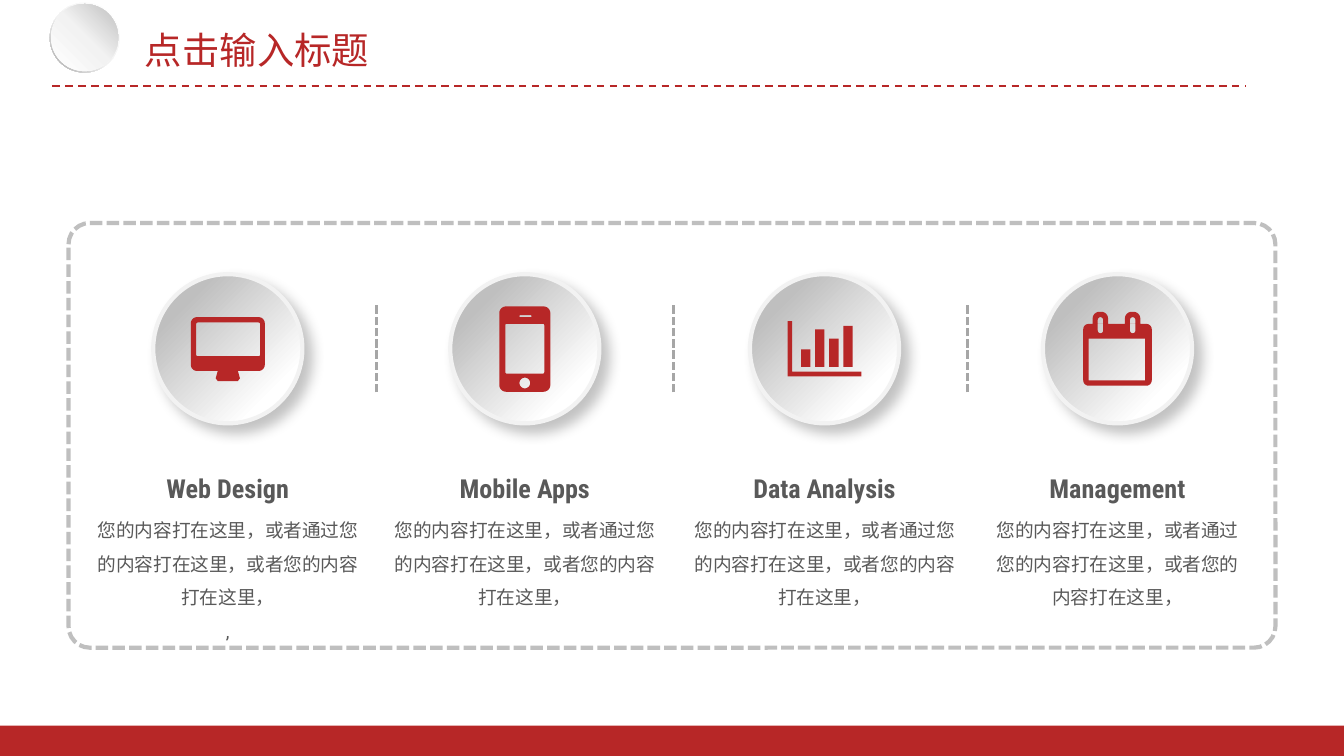
from math import cos, pi, sin

from lxml.etree import SubElement
from pptx import Presentation
from pptx.dml.color import RGBColor
from pptx.enum.dml import MSO_LINE_DASH_STYLE as Dash
from pptx.enum.shapes import MSO_CONNECTOR, MSO_SHAPE as Shape
from pptx.enum.text import MSO_ANCHOR, PP_ALIGN
from pptx.oxml.ns import qn
from pptx.util import Inches, Pt

RED = RGBColor(0xB7, 0x27, 0x27)
TEXT_GRAY = RGBColor(0x59, 0x59, 0x59)
DIVIDER_GRAY = RGBColor(0xA6, 0xA6, 0xA6)
FRAME_GRAY = RGBColor(0xBF, 0xBF, 0xBF)
PALE_GRAY = RGBColor(0xF2, 0xF2, 0xF2)
WHITE = RGBColor(0xFF, 0xFF, 0xFF)
BLACK = RGBColor(0, 0, 0)

COLUMNS, ROWS = 100, 56.25
CELL = Inches(10) / COLUMNS
DISC_SIZE, DISC_MIDDLE = 11.1, 25.95
BODY = "您的内容打在这里，或者通过您的内容打在这里，或者您的内容打在这里，"


def cells(count):
    return round(count * CELL)


def rounded(left, top, width, height, radius=0.0, bottom_radius=None):
    """Outline points of a box; the bottom corners may have their own radius."""
    low = radius if bottom_radius is None else bottom_radius
    right, bottom = left + width, top + height
    corners = [(left + radius, top + radius, radius, 2),
               (right - radius, top + radius, radius, 3),
               (right - low, bottom - low, low, 0),
               (left + low, bottom - low, low, 1)]
    points = []
    for x, y, r, quarter in corners:
        steps = 6 if r else 0
        for step in range(steps + 1):
            angle = (quarter + step / max(steps, 1)) * pi / 2
            points.append((x + r * cos(angle), y + r * sin(angle)))
    return points


# Icon outlines, in cells from the middle of the disc; inner outlines are holes.
MONITOR = [
    rounded(-2.75, -2.35, 5.5, 4, 0.45),
    rounded(-2.35, -1.95, 4.75, 2.5, 0.1),
    [(-0.75, 1.65), (0.75, 1.65), (0.9, 2.2), (0.75, 2.4), (-0.75, 2.4), (-0.9, 2.2)],
]
PHONE = [
    rounded(-1.9, -3.15, 3.8, 6.35, 0.5),
    rounded(-1.45, -1.85, 2.9, 3.7, 0.1),
    rounded(-0.4, -2.5, 0.9, 0.15, 0.07),
    rounded(-0.4, 2.15, 0.8, 0.8, 0.4),
]
BAR_CHART = [
    [(-2.75, -2.05), (-2.4, -2.05), (-2.4, 1.7), (2.75, 1.7), (2.75, 2.05), (-2.75, 2.05)],
] + [rounded(-1.75 + 1.05 * bar, 1.35 - height, 0.7, height)
     for bar, height in enumerate([1.3, 2.8, 2.1, 3.05])]
CALENDAR = [
    rounded(-2.55, -1.85, 5.1, 4.6, 0.4),
    rounded(-2.15, -0.75, 4.2, 3.1),
]
for ring_left in (-1.85, 0.55):
    CALENDAR.append(rounded(ring_left, -2.75, 1.15, 0.9, 0.5, 0))
    CALENDAR.append(rounded(ring_left + 0.38, -2.35, 0.4, 1.2, 0.2))

# Middle column, text width, heading, body, icon
SERVICES = [
    (16.95, 21.6, "Web Design", BODY + "\v,", MONITOR),
    (39.05, 22, "Mobile Apps", BODY, PHONE),
    (61.35, 21.9, "Data Analysis", BODY, BAR_CHART),
    (83.15, 21, "Management", BODY, CALENDAR),
]
DIVIDERS = [28, 50.1, 72]


class SlideArtist:
    """Draws styled elements on one slide, with lengths in grid cells."""

    font = "Roboto Condensed"

    def __init__(self, slide):
        self.shapes = slide.shapes

    def shape(self, kind, left, top, width, height, fill=None, adjustment=None):
        shape = self.shapes.add_shape(kind, *map(cells, (left, top, width, height)))
        shape.shadow.inherit = False
        shape.line.fill.background()
        if fill is None:
            shape.fill.background()
        else:
            shape.fill.solid()
            shape.fill.fore_color.rgb = fill
        if adjustment is not None:
            shape.adjustments[0] = adjustment
        return shape

    def outline(self, line, color, width, dash=None):
        line.color.rgb = color
        line.width = Pt(width)
        if dash is not None:
            line.dash_style = dash

    def gradient(self, shape, stops, angle):
        """Fill with (percent, color) stops along a clockwise angle."""
        shape.fill.gradient()
        shape.fill.gradient_angle = (360 - angle) % 360
        stop_list = shape._element.spPr.find(f"{qn('a:gradFill')}/{qn('a:gsLst')}")
        for stop in list(stop_list):
            stop_list.remove(stop)
        for percent, color in stops:
            stop = SubElement(stop_list, qn("a:gs"), pos=str(percent * 1000))
            SubElement(stop, qn("a:srgbClr"), val=str(color))

    def drop_shadow(self, shape):
        effects = shape._element.spPr.find(qn("a:effectLst"))
        shadow = SubElement(effects, qn("a:outerShdw"), blurRad=str(Pt(7)),
                            dist=str(Pt(5.9)), dir=str(45 * 60000),
                            algn="tl", rotWithShape="0")
        color = SubElement(shadow, qn("a:srgbClr"), val=str(BLACK))
        SubElement(color, qn("a:alpha"), val="23000")

    def line(self, start, end, color, width, dash):
        connector = self.shapes.add_connector(
            MSO_CONNECTOR.STRAIGHT, *map(cells, (*start, *end)))
        self.outline(connector.line, color, width, dash)
        SubElement(connector._element.spPr, qn("a:effectLst"))

    def disc(self, middle):
        disc = self.shape(Shape.OVAL, middle - DISC_SIZE / 2, DISC_MIDDLE - DISC_SIZE / 2,
                          DISC_SIZE, DISC_SIZE)
        self.gradient(disc, [(20, FRAME_GRAY), (80, WHITE), (100, WHITE)], 45)
        self.outline(disc.line, PALE_GRAY, 2.25)
        self.drop_shadow(disc)

    def icon(self, middle, outlines):
        placed = [[(cells(middle + x), cells(DISC_MIDDLE + y)) for x, y in points]
                  for points in outlines]
        builder = self.shapes.build_freeform(*placed[0][0])
        for points in placed:
            builder.move_to(*points[0])
            builder.add_line_segments(points[1:], close=True)
        icon = builder.convert_to_shape()
        icon.shadow.inherit = False
        icon.fill.solid()
        icon.fill.fore_color.rgb = RED
        icon.line.fill.background()

    def text(self, left, top, width, height, lines, color, align=PP_ALIGN.LEFT,
             anchor=MSO_ANCHOR.TOP, spacing=1.0):
        """Write (text, size, bold) lines, one paragraph each."""
        box = self.shapes.add_textbox(*map(cells, (left, top, width, height)))
        frame = box.text_frame
        frame.word_wrap = True
        frame.vertical_anchor = anchor
        frame.text = "\n".join(content for content, _, _ in lines)
        for index, (para, (_, size, bold)) in enumerate(zip(frame.paragraphs, lines)):
            para.alignment = align
            para.line_spacing = spacing
            if index:
                para.space_before = Pt(size * 0.2)
            for span in para.runs:
                span.font.name = self.font
                span.font.size = Pt(size)
                span.font.bold = bold
                span.font.color.rgb = color


def main():
    deck = Presentation()
    deck.slide_width, deck.slide_height = cells(COLUMNS), cells(ROWS)
    artist = SlideArtist(deck.slides.add_slide(deck.slide_layouts[6]))

    artist.line((3.9, 6.4), (92.7, 6.4), RED, 1, Dash.DASH)
    rim = artist.shape(Shape.DONUT, 3.7, 0.2, 5.2, 5.2, adjustment=0.05)
    artist.gradient(rim, [(0, WHITE), (55, PALE_GRAY), (100, DIVIDER_GRAY)], 135)
    button = artist.shape(Shape.OVAL, 3.8, 0.3, 5, 5)
    artist.gradient(button, [(0, WHITE), (51, PALE_GRAY), (100, FRAME_GRAY)], 315)
    artist.text(9.8, 1.4, 27.5, 4.5, [("点击输入标题", 20, False)], RED,
                anchor=MSO_ANCHOR.MIDDLE)
    artist.shape(Shape.RECTANGLE, 0, 54, COLUMNS, ROWS - 54, RED)

    frame = artist.shape(Shape.ROUNDED_RECTANGLE, 5.1, 16.6, 89.8, 31.6, adjustment=0.05)
    artist.outline(frame.line, FRAME_GRAY, 2.25, Dash.SQUARE_DOT)
    for column in DIVIDERS:
        artist.line((column, 29.2), (column, 22.7), DIVIDER_GRAY, 1.5, Dash.SQUARE_DOT)
    for middle, width, heading, body, outlines in SERVICES:
        artist.text(middle - width / 2, 33.5, width, 15,
                    [(heading, 14, True), (body, 10, False)], TEXT_GRAY,
                    align=PP_ALIGN.CENTER, spacing=1.5)
        artist.disc(middle)
        artist.icon(middle, outlines)

    deck.save("out.pptx")


if __name__ == "__main__":
    main()
